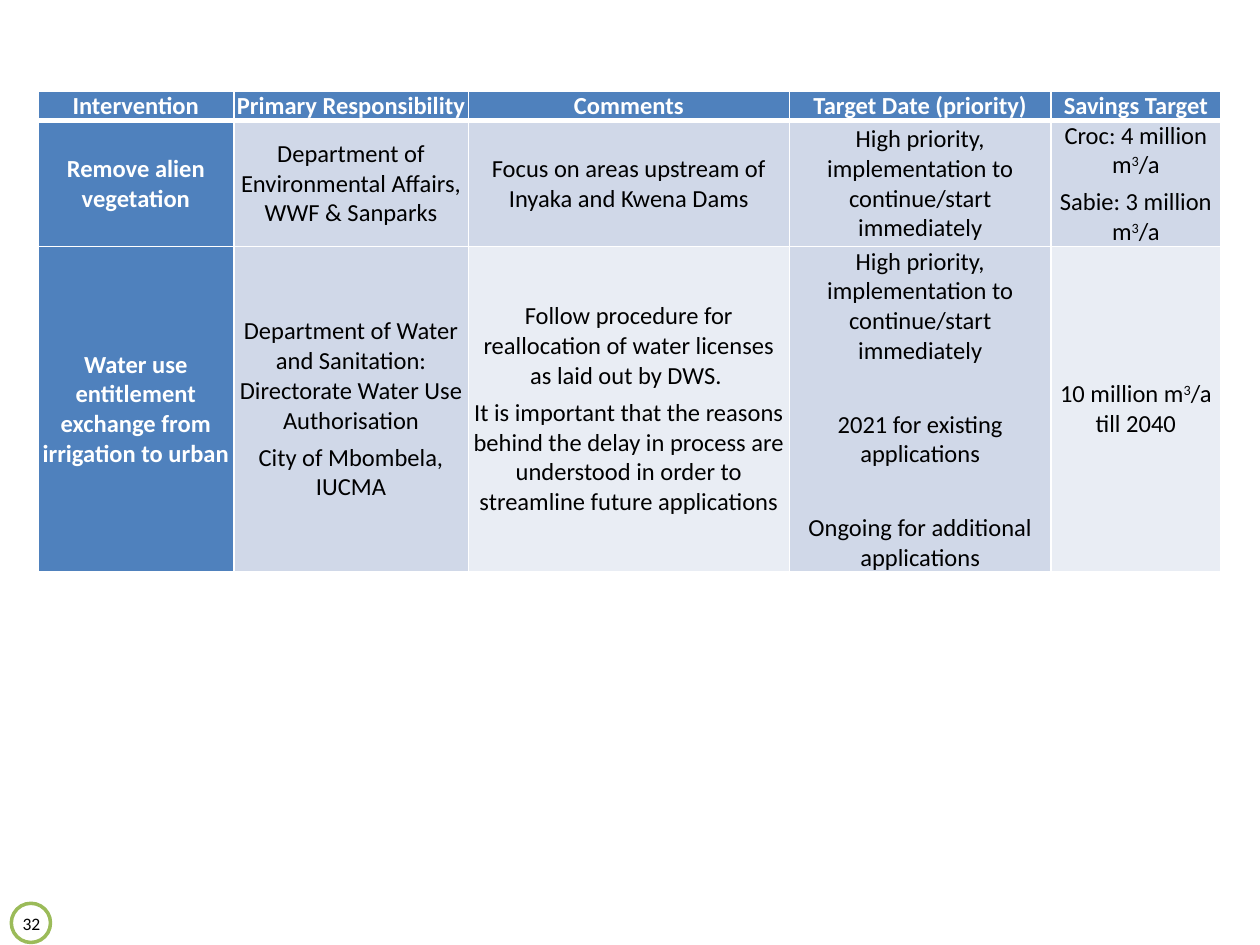
from pptx import Presentation
from pptx.dml.color import RGBColor
from pptx.enum.shapes import MSO_SHAPE as Shape
from pptx.enum.text import MSO_ANCHOR as Anchor, PP_ALIGN as Align
from pptx.oxml import parse_xml
from pptx.oxml.ns import nsdecls
from pptx.util import Pt

WHITE = RGBColor(0xFF, 0xFF, 0xFF)
BLACK = RGBColor(0, 0, 0)
BLUE = RGBColor(0x4F, 0x81, 0xBD)
BAND = RGBColor(0xD0, 0xD8, 0xE8)
PALE = RGBColor(0xE9, 0xED, 0xF4)
GREEN = RGBColor(0x9B, 0xBB, 0x59)
FONT = "Calibri"

COLUMN_WIDTHS = [112, 134, 183.5, 149.5, 97]
ROW_HEIGHTS = [17, 72, 186]
PARAGRAPH_GAP = 2
SECTION_GAP = 23

PRIORITY = "High priority, implementation to continue/start immediately"

# One list of paragraphs per cell; ^ switches superscript on and off
ROWS = [
    [["Intervention"], ["Primary Responsibility"], ["Comments"],
     ["Target Date (priority)"], ["Savings Target"]],
    [["Remove alien vegetation"],
     ["Department of Environmental Affairs, WWF & Sanparks"],
     ["Focus on areas upstream of Inyaka and Kwena Dams"],
     [PRIORITY],
     ["Croc: 4 million m^3^/a", "Sabie: 3 million m^3^/a"]],
    [["Water use entitlement exchange from irrigation to urban"],
     ["Department of Water and Sanitation: Directorate Water Use Authorisation",
      "City of Mbombela, IUCMA"],
     ["Follow procedure for reallocation of water licenses as laid out by DWS. ",
      "It is important that the reasons behind the delay in process are "
      "understood in order to streamline future applications"],
     [PRIORITY, "2021 for existing applications",
      "Ongoing for additional applications"],
     ["10 million m^3^/a till 2040"]],
]
ROW_FILLS = [
    [BLUE] * 5,
    [BLUE] + [BAND] * 4,
    [BLUE, BAND, PALE, BAND, PALE],
]


def set_font(paragraph, size, color, bold=False):
    paragraph.alignment = Align.CENTER
    font = paragraph.font
    font.name, font.size, font.bold = FONT, Pt(size), bold
    font.color.rgb = color


def add_rich_text(paragraph, text):
    for index, part in enumerate(text.split("^")):
        run = paragraph.add_run()
        run.text = part
        if index % 2:
            run._r.get_or_add_rPr().set("baseline", "30000")


def set_borders(cell, top, bottom):
    properties = cell._tc.get_or_add_tcPr()
    for side, width in (("L", 1), ("R", 1), ("T", top), ("B", bottom)):
        properties.append(parse_xml(
            f'<a:ln{side} {nsdecls("a")} w="{Pt(width)}"><a:solidFill>'
            f'<a:srgbClr val="{WHITE}"/></a:solidFill></a:ln{side}>'))


def fill_cell(cell, paragraphs, fill, gap):
    cell.fill.solid()
    cell.fill.fore_color.rgb = fill
    cell.vertical_anchor = Anchor.MIDDLE
    cell.margin_left = cell.margin_right = Pt(1.4)
    cell.margin_top = cell.margin_bottom = 0
    heading = fill == BLUE
    frame = cell.text_frame
    for index, text in enumerate(paragraphs):
        paragraph = frame.add_paragraph() if index else frame.paragraphs[0]
        paragraph.space_before = Pt(gap if index else 0)
        paragraph.space_after = Pt(PARAGRAPH_GAP)
        set_font(paragraph, 14, WHITE if heading else BLACK, heading)
        add_rich_text(paragraph, text)


def add_interventions_table(slide, left, top, width, height):
    table = slide.shapes.add_table(
        len(ROWS), len(COLUMN_WIDTHS),
        Pt(left), Pt(top), Pt(width), Pt(height)).table
    table.first_col = True
    table.horz_banding = False
    for column, column_width in zip(table.columns, COLUMN_WIDTHS):
        column.width = Pt(column_width)
    for r, (row, row_height) in enumerate(zip(table.rows, ROW_HEIGHTS)):
        row.height = Pt(row_height)
        for cell, paragraphs, fill in zip(row.cells, ROWS[r], ROW_FILLS[r]):
            # A thick rule parts the header from the body
            set_borders(cell, top=3 if r == 1 else 1, bottom=3 if r == 0 else 1)
            gap = SECTION_GAP if len(paragraphs) > 2 else PARAGRAPH_GAP
            fill_cell(cell, paragraphs, fill, gap)


def add_page_number(slide, left, top, size, number):
    # Ring
    ring = slide.shapes.add_shape(
        Shape.OVAL, Pt(left), Pt(top), Pt(size), Pt(size))
    ring.shadow.inherit = False
    ring.fill.solid()
    ring.fill.fore_color.rgb = WHITE
    ring.line.color.rgb = GREEN
    ring.line.width = Pt(2)
    # Number
    box = slide.shapes.add_textbox(
        Pt(left), Pt(top + 2.2), Pt(size + 0.5), Pt(14.4))
    frame = box.text_frame
    frame.word_wrap = True
    frame.margin_left = frame.margin_right = 0
    frame.text = number
    set_font(frame.paragraphs[0], 10, BLACK)


def main():
    presentation = Presentation()
    presentation.slide_width, presentation.slide_height = Pt(720), Pt(540)
    slide = presentation.slides.add_slide(presentation.slide_layouts[6])
    add_page_number(slide, 6.5, 516.2, 22.4, "32")
    add_interventions_table(
        slide, 21.6, 52, sum(COLUMN_WIDTHS), sum(ROW_HEIGHTS))
    presentation.save("out.pptx")


if __name__ == "__main__":
    main()
